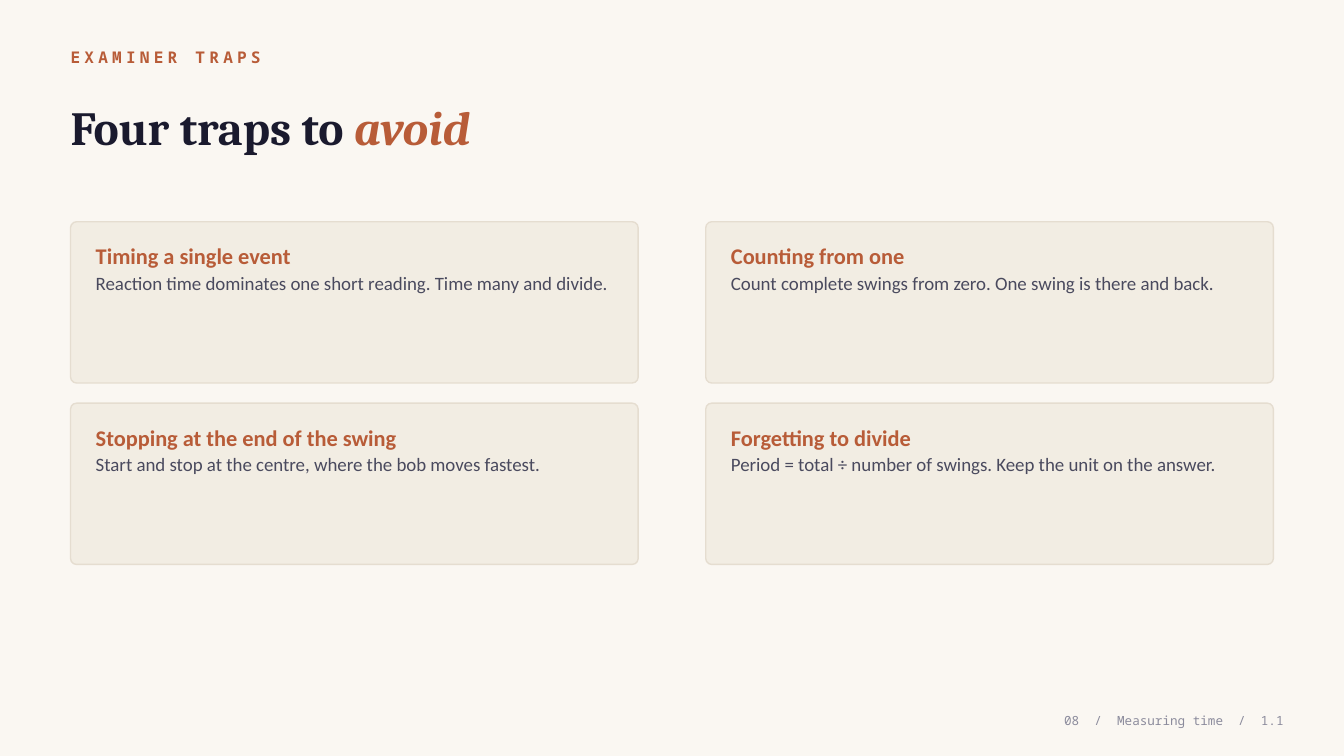
from pptx import Presentation
from pptx.dml.color import RGBColor
from pptx.enum.shapes import MSO_SHAPE
from pptx.enum.text import MSO_ANCHOR, PP_ALIGN
from pptx.util import Inches, Pt

# Content
KICKER = "EXAMINER TRAPS"
TITLE = ("Four traps to ", "avoid")
TRAPS = [
    ("Timing a single event",
     "Reaction time dominates one short reading. Time many and divide."),
    ("Counting from one",
     "Count complete swings from zero. One swing is there and back."),
    ("Stopping at the end of the swing",
     "Start and stop at the centre, where the bob moves fastest."),
    ("Forgetting to divide",
     "Period = total ÷ number of swings. Keep the unit on the answer."),
]
FOOTER = "08  /  Measuring time  /  1.1"

# Colours and text formats
PAPER = RGBColor(0xFA, 0xF7, 0xF2)
CARD = RGBColor(0xF2, 0xED, 0xE3)
BORDER = RGBColor(0xE5, 0xDD, 0xD0)
RUST = RGBColor(0xB8, 0x5C, 0x38)
INK = RGBColor(0x1A, 0x1A, 0x2E)
BODY = RGBColor(0x4A, 0x4A, 0x5E)
MUTED = RGBColor(0x8B, 0x8B, 0x9C)

KICKER_FMT = dict(name="Noto Sans Mono", size=Pt(11.5), bold=True, color=RUST)
TITLE_FMT = dict(name="Cambria", size=Pt(34), bold=True, color=INK)
ACCENT_FMT = dict(TITLE_FMT, italic=True, color=RUST)
HEAD_FMT = dict(name="Calibri", size=Pt(16), bold=True, color=RUST)
BODY_FMT = dict(name="Calibri", size=Pt(13.5), bold=False, color=BODY)
FOOTER_FMT = dict(name="Noto Sans Mono", size=Pt(9), color=MUTED)

# Grid, in inches
WIDTH, HEIGHT = 13.33, 7.5
MARGIN = 0.7
CONTENT_W = WIDTH - 2 * MARGIN
COLS = 2
CARD_W, CARD_H = 5.63, 1.6
COL_STEP = CONTENT_W - CARD_W
ROW_TOP, ROW_STEP = 2.2, 1.8
PAD_X, PAD_Y = 0.25, 0.18
FOOTER_W = 3.4


def add_run(p, text, fmt):
    r = p.add_run()
    r.text = text
    for key, value in fmt.items():
        if key == "color":
            r.font.color.rgb = value
        else:
            setattr(r.font, key, value)
    return r


def set_frame(shape, anchor):
    tf = shape.text_frame
    frame = dict(word_wrap=True, vertical_anchor=anchor, margin_left=0,
                 margin_top=0, margin_right=0, margin_bottom=0)
    for key, value in frame.items():
        setattr(tf, key, value)
    return tf


def add_text(s, box, anchor=MSO_ANCHOR.MIDDLE):
    return set_frame(s.shapes.add_textbox(*map(Inches, box)), anchor)


def add_card(s, left, top, head, body):
    sp = s.shapes.add_shape(MSO_SHAPE.ROUNDED_RECTANGLE,
                            *map(Inches, (left, top, CARD_W, CARD_H)))
    sp.adjustments[0] = 0.037
    sp.shadow.inherit = False
    sp.fill.solid()
    sp.fill.fore_color.rgb = CARD
    sp.line.color.rgb = BORDER
    sp.line.width = Pt(1)
    tf = add_text(s, (left + PAD_X, top + PAD_Y,
                      CARD_W - 2 * PAD_X, CARD_H - 2 * PAD_Y), MSO_ANCHOR.TOP)
    for p, text, fmt in ((tf.paragraphs[0], head, HEAD_FMT),
                         (tf.add_paragraph(), body, BODY_FMT)):
        p.line_spacing = 1.1
        add_run(p, text, fmt)


def main():
    prs = Presentation()
    prs.slide_width, prs.slide_height = Inches(WIDTH), Inches(HEIGHT)
    s = prs.slides.add_slide(prs.slide_layouts[5])
    s.background.fill.solid()
    s.background.fill.fore_color.rgb = PAPER

    # Kicker with wide letter spacing
    tf = add_text(s, (MARGIN, 0.42, CONTENT_W, 0.3))
    r = add_run(tf.paragraphs[0], KICKER, KICKER_FMT)
    r.font._element.set("spc", "300")

    # Title
    title = s.shapes.title
    title.left, title.top, title.width, title.height = map(
        Inches, (MARGIN, 0.78, CONTENT_W, 0.95))
    p = set_frame(title, MSO_ANCHOR.MIDDLE).paragraphs[0]
    p.alignment = PP_ALIGN.LEFT
    for text, fmt in zip(TITLE, (TITLE_FMT, ACCENT_FMT)):
        add_run(p, text, fmt)

    # Trap cards
    for i, (head, body) in enumerate(TRAPS):
        row, col = divmod(i, COLS)
        add_card(s, MARGIN + col * COL_STEP, ROW_TOP + row * ROW_STEP, head, body)

    # Footer
    tf = add_text(s, (WIDTH - 0.6 - FOOTER_W, HEIGHT - 0.5, FOOTER_W, 0.3))
    tf.paragraphs[0].alignment = PP_ALIGN.RIGHT
    add_run(tf.paragraphs[0], FOOTER, FOOTER_FMT)

    prs.save("out.pptx")


if __name__ == "__main__":
    main()
